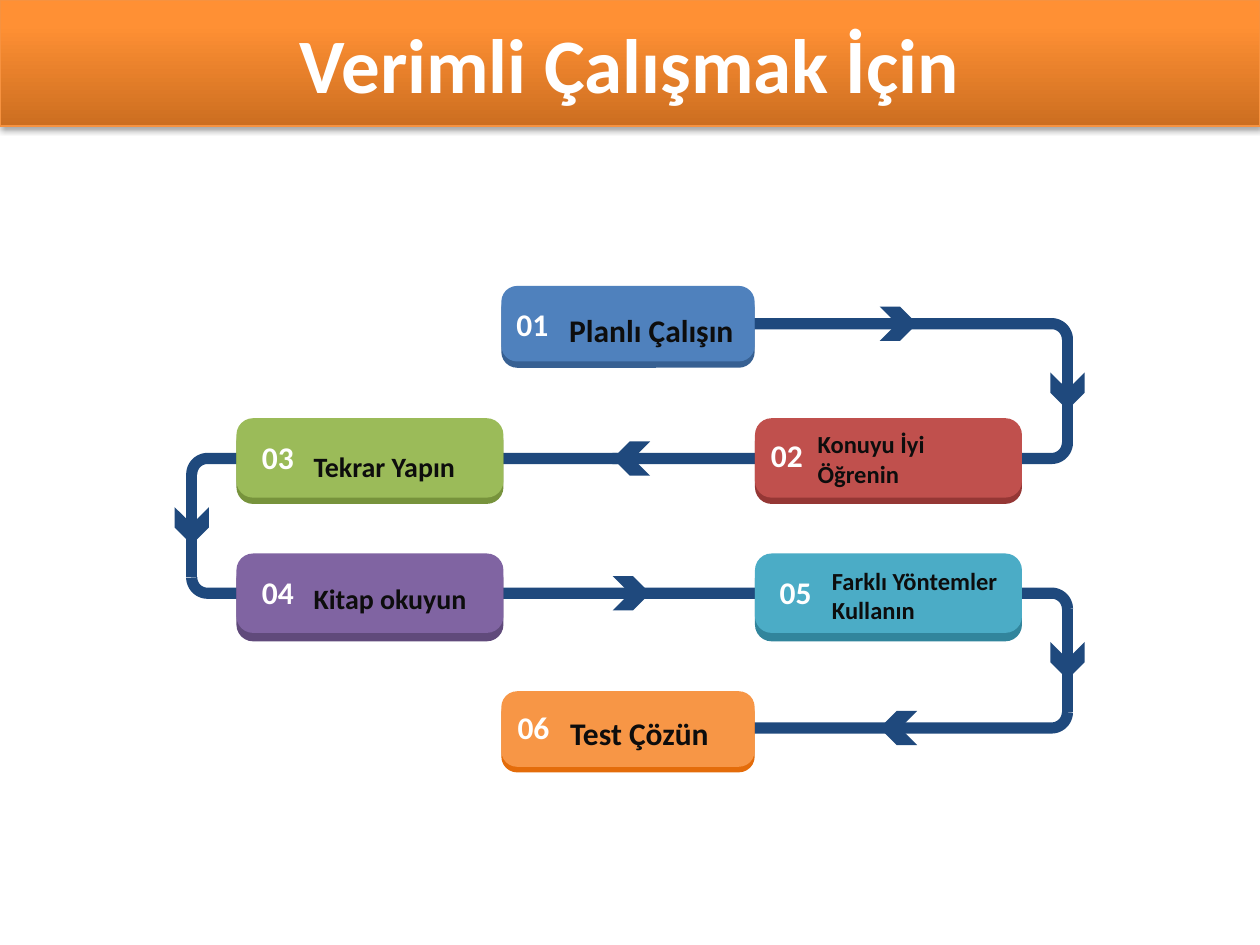
from dataclasses import dataclass
from copy import deepcopy
from math import cos, pi, sin

from lxml import etree
from pptx import Presentation
from pptx.dml.color import RGBColor
from pptx.enum.shapes import MSO_CONNECTOR, MSO_SHAPE
from pptx.enum.text import MSO_ANCHOR, MSO_AUTO_SIZE, PP_ALIGN
from pptx.oxml.ns import qn
from pptx.util import Pt

RECT, ROUND, ARROW = MSO_SHAPE.RECTANGLE, MSO_SHAPE.ROUNDED_RECTANGLE, MSO_SHAPE.CHEVRON
LINE = MSO_CONNECTOR.STRAIGHT
LEFT, MID = PP_ALIGN.LEFT, PP_ALIGN.CENTER
CENTER = MSO_ANCHOR.MIDDLE
GROW = MSO_AUTO_SIZE.SHAPE_TO_FIT_TEXT

HEX = {
    "white": "FFFFFF", "ink": "0D0D0D", "track": "1F497D", "edge": "F69240",
    "blue": "4F81BD", "blue_low": "376092", "red": "C0504D", "red_low": "953735",
    "green": "9BBB59", "green_low": "77933C", "violet": "8064A2", "violet_low": "604A7B",
    "teal": "4BACC6", "teal_low": "31859C", "orange": "F79646", "orange_low": "E46C0A",
    "fade_low": "CC6E20", "fade_mid": "FF9034", "fade_top": "FF9136", "shade": "000000",
}
FADE = [(0, "fade_low"), (0.8, "fade_mid"), (1, "fade_top")]
ROWS = [185 + 77 * i for i in range(4)]
EAST, WEST = 610, 109.6
BEND = 9
THICK = 6.38


@dataclass
class Card:
    num: str
    label: str
    hue: str
    x: float
    y: float
    w: float
    h: float
    drop: float
    num_at: tuple[float, float]
    text_at: tuple[float, float]
    text_w: float
    size: float


@dataclass
class Bend:
    start: float
    side: float
    row: int
    down: int


@dataclass
class Mark:
    x: float
    y: float
    turn: float


CARDS = [
    Card("01", "Planlı Çalışın", "blue", 286.5, 163.4, 144.8, 43.2, 3.6,
         (285.1, 170.6), (318.2, 174.2), 112, 18),
    Card("02", "Konuyu İyi Öğrenin", "red", 431.4, 239, 152.6, 45.4, 3.6,
         (430.6, 245.5), (460.1, 241.9), 123.1, 14),
    Card("03", "Tekrar Yapın", "green", 135.1, 239, 152.6, 45.4, 3.6,
         (139.7, 247), (172.1, 253.4), 108.7, 16),
    Card("05", "Farklı Yöntemler Kullanın", "teal", 431.4, 316.3, 152.6, 45.4, 4.8,
         (435.6, 324), (468.3, 319.7), 114, 14),
    Card("04", "Kitap okuyun", "violet", 135.1, 316.3, 152.6, 45.4, 4.8,
         (139.7, 324), (172.1, 329), 108.7, 16),
    Card("06", "Test Çözün", "orange", 286.5, 395, 144.8, 43.2, 3.2,
         (285.8, 401), (318.7, 404.6), 108.7, 18),
]
BENDS = [
    Bend(353, EAST, 3, -1), Bend(476, EAST, 2, 1), Bend(350, EAST, 1, -1),
    Bend(375, EAST, 0, 1), Bend(572, WEST, 2, -1), Bend(353, WEST, 1, 1),
]
DROPS = [(EAST, 0), (WEST, 1), (EAST, 2)]
MARKS = [
    Mark(513.4, ROWS[0], 0), Mark(360.8, ROWS[1], 180),
    Mark(360.8, ROWS[2], 0), Mark(513.4, ROWS[3], 180),
] + [Mark(x, (ROWS[i] + ROWS[i + 1]) / 2, 90) for x, i in DROPS]


def rgb(name: str) -> RGBColor:
    return RGBColor.from_string(HEX[name])


def write(frame, text: str, *, size: float, color: str, align=LEFT) -> None:
    frame.word_wrap = True
    para = frame.paragraphs[0]
    para.alignment = align
    run = para.add_run()
    run.text = text
    font = run.font
    font.name, font.size, font.bold = "Calibri", Pt(size), True
    font.color.rgb = rgb(color)


def label(shapes, text: str, at: tuple[float, float], w: float, h: float, **form) -> None:
    box = shapes.add_textbox(Pt(at[0]), Pt(at[1]), Pt(w), Pt(h))
    write(box.text_frame, text, **form)
    box.text_frame.auto_size = GROW


def block(shapes, kind, x: float, y: float, w: float, h: float, color: str):
    shape = shapes.add_shape(kind, Pt(x), Pt(y), Pt(w), Pt(h))
    shape.shadow.inherit = False
    shape.fill.solid()
    shape.fill.fore_color.rgb = rgb(color)
    shape.line.fill.background()
    return shape


def ink(line) -> None:
    line.color.rgb = rgb("track")
    line.width = Pt(THICK)


def draw_title(shapes) -> None:
    bar = block(shapes, RECT, 0, 0, 720, 72, "edge")
    bar.line.color.rgb = rgb("edge")
    bar.line.width = Pt(0.75)
    bar.fill.gradient()
    bar.fill.gradient_angle = 90
    props = bar.element.spPr
    stops = props.find(qn("a:gradFill")).find(qn("a:gsLst"))
    stops.append(deepcopy(stops[0]))
    for stop, (place, color) in zip(bar.fill.gradient_stops, FADE):
        stop.position = place
        stop.color.rgb = rgb(color)
    # Soft shadow under the bar
    glow = etree.SubElement(props.find(qn("a:effectLst")), qn("a:outerShdw"),
                            blurRad=str(Pt(3.1)), dist=str(Pt(1.8)),
                            dir="5400000", rotWithShape="0")
    tone = etree.SubElement(glow, qn("a:srgbClr"), val=HEX["shade"])
    etree.SubElement(tone, qn("a:alpha"), val="35000")
    bar.text_frame.vertical_anchor = CENTER
    write(bar.text_frame, "Verimli Çalışmak İçin", size=44, color="white", align=MID)


def draw_bend(shapes, bend: Bend) -> None:
    y = ROWS[bend.row]
    way = 1 if bend.side > bend.start else -1
    hub_x, hub_y = bend.side - way * BEND, y + bend.down * BEND
    turns = [pi / 2 * i / 12 for i in range(13)]
    arc = [(Pt(hub_x + way * BEND * sin(t)), Pt(hub_y - bend.down * BEND * cos(t)))
           for t in turns]
    pen = shapes.build_freeform(Pt(bend.start), Pt(y))
    pen.add_line_segments(arc, close=False)
    shape = pen.convert_to_shape()
    shape.shadow.inherit = False
    shape.fill.background()
    ink(shape.line)


def draw_drop(shapes, x: float, row: int) -> None:
    line = shapes.add_connector(LINE, Pt(x), Pt(ROWS[row] + BEND),
                                Pt(x), Pt(ROWS[row + 1] - BEND))
    ink(line.line)
    etree.SubElement(line.element.spPr, qn("a:effectLst"))


def draw_card(shapes, card: Card) -> None:
    group = shapes.add_group_shape().shapes
    for shift, color in ((card.drop, card.hue + "_low"), (0, card.hue)):
        face = block(group, ROUND, card.x, card.y + shift, card.w, card.h, color)
        face.adjustments[0] = 0.21
    label(group, card.num, card.num_at, 38.2, 29, size=18, color="white", align=MID)
    tall = {14: 41, 16: 26.6, 18: 29}[card.size]
    label(group, card.label, card.text_at, card.text_w, tall, size=card.size, color="ink")


def draw_mark(shapes, mark: Mark) -> None:
    w, h = 21.4, 19.6
    block(shapes, ARROW, mark.x - w / 2, mark.y - h / 2, w, h, "track").rotation = mark.turn


def main() -> None:
    deck = Presentation()
    deck.slide_width, deck.slide_height = Pt(720), Pt(540)
    shapes = deck.slides.add_slide(deck.slide_layouts[6]).shapes
    draw_title(shapes)
    # Winding track
    for bend in BENDS:
        draw_bend(shapes, bend)
    for x, row in DROPS:
        draw_drop(shapes, x, row)
    # Numbered steps
    for card in CARDS:
        draw_card(shapes, card)
    # Direction marks
    for mark in MARKS:
        draw_mark(shapes, mark)
    deck.save("out.pptx")


if __name__ == "__main__":
    main()
